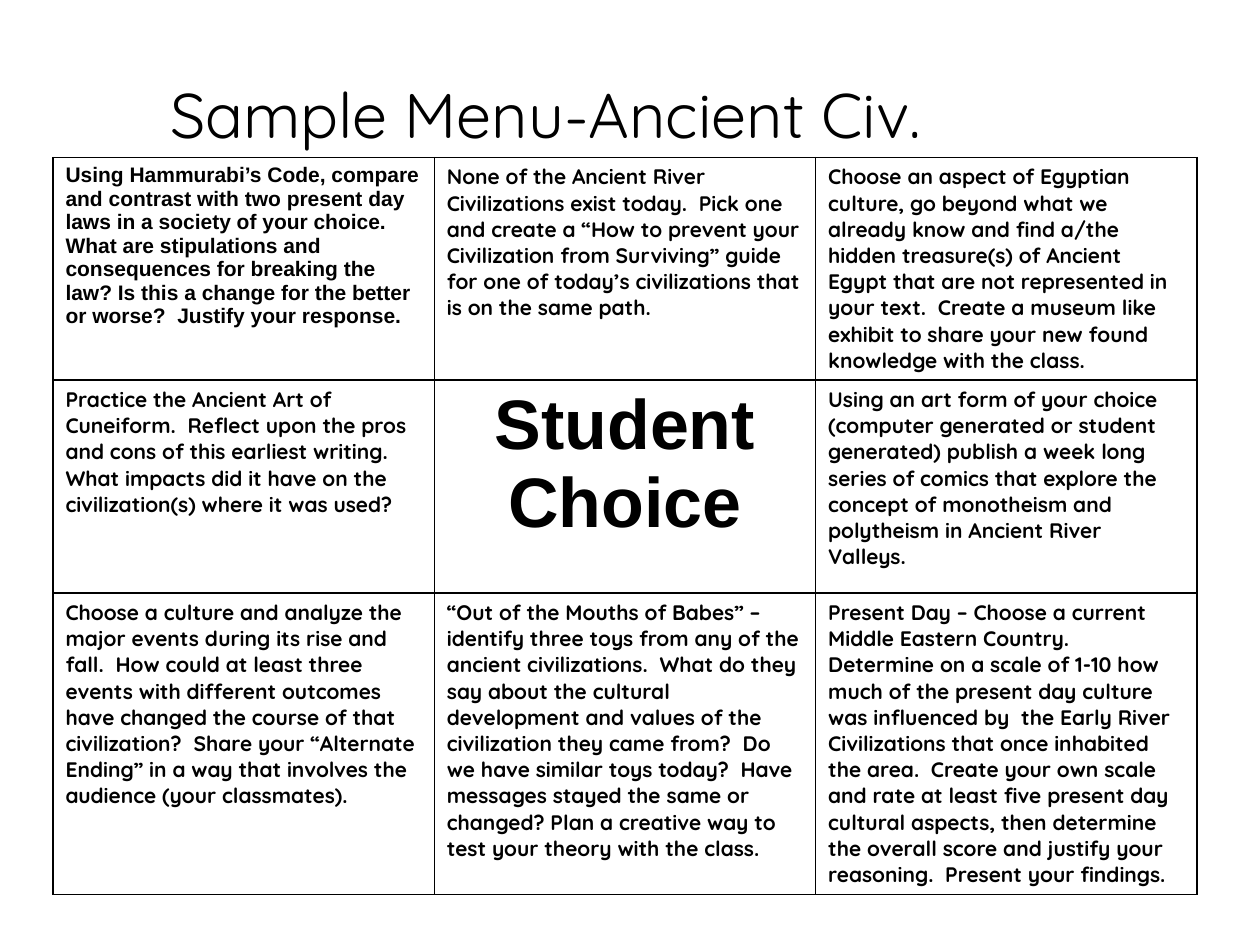
"""Build a slide with a three by three menu of ancient civilization projects."""
from lxml import etree
from pptx import Presentation
from pptx import util as u
from pptx.dml.color import RGBColor
from pptx.enum import text
from pptx.oxml import ns

BLACK, WHITE = "000000", "FFFFFF"
BODY, PLAIN = "Quicksand", "Arial"
LEFT, CENTER = text.PP_ALIGN.LEFT, text.PP_ALIGN.CENTER

MENU = [
    [
        "Using Hammurabi’s Code, compare and contrast with two present day laws in a "
        "society of your choice.  What are stipulations and consequences for breaking "
        "the law? Is this a change for the better or worse?  Justify your response.",
        "None of the Ancient River Civilizations exist today.  Pick one and create a "
        "“How to prevent your Civilization from Surviving” guide for one of today’s "
        "civilizations that is on the same path.",
        "Choose an aspect of Egyptian culture, go beyond what we already know and find "
        "a/the hidden treasure(s) of Ancient Egypt that are not represented in your "
        "text.  Create a museum like exhibit to share your new found knowledge with "
        "the class.",
    ],
    [
        "Practice the Ancient Art of Cuneiform.  Reflect upon the pros and cons of this "
        "earliest writing. What impacts did it have on the civilization(s) where it was "
        "used?",
        "Student Choice",
        "Using an art form of your choice (computer generated or student generated) "
        "publish a week long series of comics that explore the concept of monotheism "
        "and polytheism in Ancient River Valleys.",
    ],
    [
        "Choose a culture and analyze the major events during its rise and fall.  How "
        "could at least three events with different outcomes have changed the course of "
        "that civilization?  Share your “Alternate Ending” in a way that involves the "
        "audience (your classmates).",
        "“Out of the Mouths of Babes” – identify three toys from any of the ancient "
        "civilizations.  What do they say about the cultural development and values of "
        "the civilization they came from?  Do we have similar toys today?  Have messages "
        "stayed the same or changed? Plan a creative way to test your theory with the "
        "class.",
        "Present Day – Choose a current Middle Eastern Country.  Determine on a scale of "
        "1-10 how much of the present day culture was influenced by  the Early River "
        "Civilizations that once inhabited the area.  Create your own scale and rate at "
        "least five present day cultural aspects, then determine the overall score and "
        "justify your reasoning.  Present your findings.",
    ],
]
SPECIAL = {(0, 0): (12, PLAIN, LEFT), (1, 1): (40, PLAIN, CENTER)}


def color(value):
    return RGBColor.from_string(value)


class MenuSlide:
    """Hold the style and the current slide."""

    def __init__(self, deck):
        self.page = deck.slides.add_slide(deck.slide_layouts[5])

    def add_words(self, frame, words, size, font, align=LEFT, bold=False):
        para = frame.paragraphs[0]
        para.alignment = align
        span = para.add_run()
        span.text = words
        span.font.size = u.Pt(size)
        span.font.name = font
        span.font.bold = bold
        span.font.color.rgb = color(BLACK)

    def title(self, words, left, top, width, height):
        box = self.page.shapes.title
        box.left, box.top = u.Inches(left), u.Inches(top)
        box.width, box.height = u.Inches(width), u.Inches(height)
        box.text_frame.vertical_anchor = text.MSO_ANCHOR.MIDDLE
        self.add_words(box.text_frame, words, 36, BODY)

    def border(self, cell):
        properties = cell._tc.get_or_add_tcPr()
        for position, side in enumerate(("lnL", "lnR", "lnT", "lnB")):
            line = etree.Element(ns.qn(f"a:{side}"), w=str(u.Pt(1)))
            fill = etree.SubElement(line, ns.qn("a:solidFill"))
            etree.SubElement(fill, ns.qn("a:srgbClr"), val=BLACK)
            properties.insert(position, line)

    def table(self, rows, left, top, width, height, row_height):
        frame = self.page.shapes.add_table(
            len(rows), len(rows[0]), u.Inches(left), u.Inches(top),
            u.Inches(width), u.Inches(height))
        grid = frame.table
        for row, entries in enumerate(rows):
            grid.rows[row].height = u.Inches(row_height)
            for column, words in enumerate(entries):
                cell = grid.cell(row, column)
                cell.fill.solid()
                cell.fill.fore_color.rgb = color(WHITE)
                self.border(cell)
                size, font, align = SPECIAL.get((row, column), (12, BODY, LEFT))
                self.add_words(cell.text_frame, words, size, font, align, bold=True)
        frame.height = u.Inches(height)


def main():
    deck = Presentation()
    deck.slide_width, deck.slide_height = u.Inches(10), u.Inches(7.5)
    menu = MenuSlide(deck)
    menu.title("Sample Menu-Ancient Civ.", 1.25, 0.5, 7.75, 0.8)
    menu.table(MENU, 0.42, 1.25, 9.08, 5.69, 1.69)
    deck.save("out.pptx")


if __name__ == "__main__":
    main()
